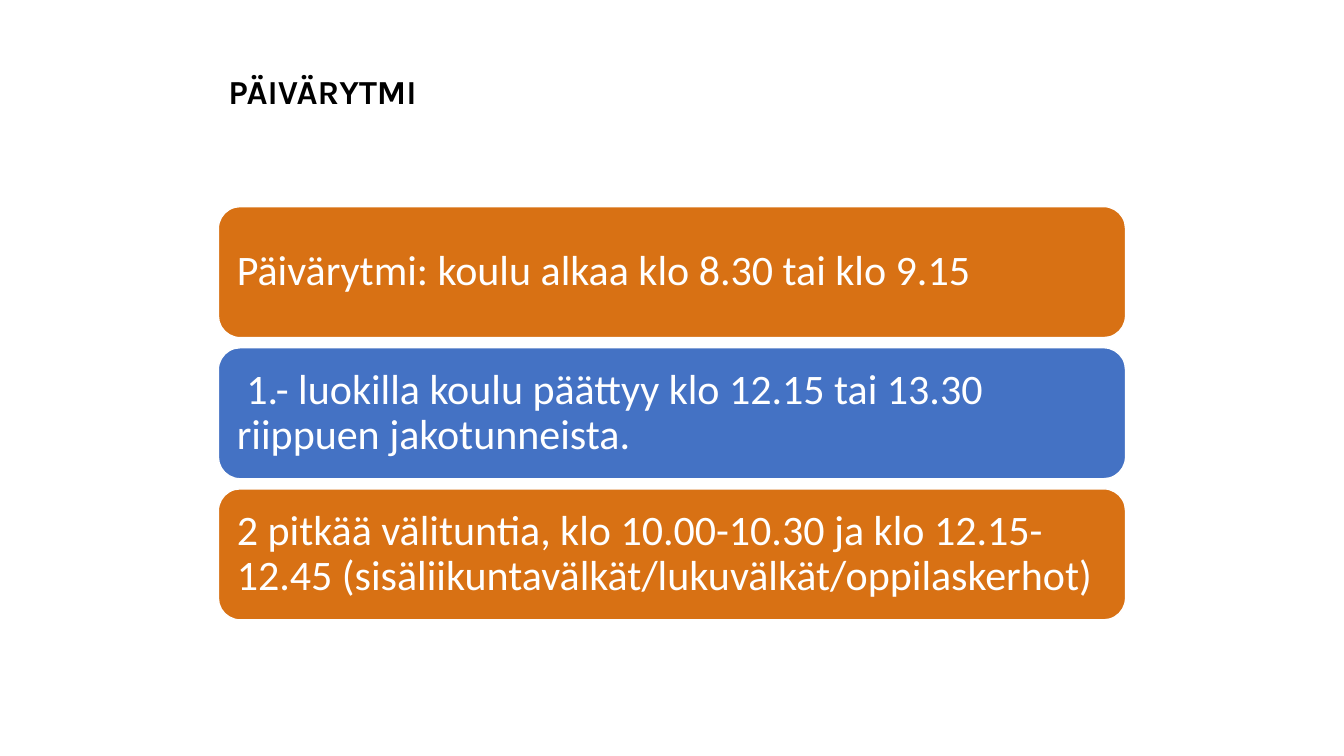
from pptx import Presentation
from pptx.dml.color import RGBColor
from pptx.enum.shapes import MSO_SHAPE as Shape
from pptx.enum.text import MSO_ANCHOR as Anchor, PP_ALIGN as Align
from pptx.util import Inches, Pt

WIDE, HIGH = Inches(13.33), Inches(7.5)
COLS, ROWS = 80, 150
ORANGE, BLUE, WHITE, BLACK = "D87114", "4472C4", "FFFFFF", "000000"
CARDS = [
    ("Päivärytmi: koulu alkaa klo 8.30 tai klo 9.15", ORANGE),
    (" 1.- luokilla koulu päättyy klo 12.15 tai 13.30 riippuen jakotunneista.", BLUE),
    ("2 pitkää välituntia, klo 10.00-10.30 ja klo 12.15-12.45 "
     "(sisäliikuntavälkät/lukuvälkät/oppilaskerhot)", ORANGE),
]


def color(code):
    """Turn a hex string into a colour."""
    return RGBColor.from_string(code)


def place(box):
    """Turn a grid box of column, row, width and height into slide lengths."""
    col, row, wide, high = box
    return (round(WIDE * col / COLS), round(HIGH * row / ROWS),
            round(WIDE * wide / COLS), round(HIGH * high / ROWS))


def write(frame, text, face, size, code, bold=False):
    """Write one left-aligned, vertically centred paragraph."""
    frame.word_wrap = True
    frame.vertical_anchor = Anchor.MIDDLE
    para = frame.paragraphs[0]
    para.alignment = Align.LEFT
    para.line_spacing = 0.9
    run = para.add_run()
    run.text = text
    run.font.name = face
    run.font.size = Pt(size)
    run.font.bold = bold
    run.font.color.rgb = color(code)


def head(slide, box, text):
    """Move the title placeholder into the box and fill it."""
    title = slide.shapes.title
    title.left, title.top, title.width, title.height = place(box)
    write(title.text_frame, text, "Karla", 24, BLACK, True)


def card(slide, box, text, fill):
    """Draw one rounded card with its text."""
    shape = slide.shapes.add_shape(Shape.ROUNDED_RECTANGLE, *place(box))
    shape.shadow.inherit = False
    shape.fill.solid()
    shape.fill.fore_color.rgb = color(fill)
    shape.line.color.rgb = color(WHITE)
    shape.line.width = Pt(1)
    frame = shape.text_frame
    frame.margin_left = frame.margin_right = Inches(0.12)
    frame.margin_top = frame.margin_bottom = Inches(0.12)
    write(frame, text, "Calibri", 30, WHITE)


def stack(slide, box, cards, gap=2):
    """Share the box out among equal cards from top to bottom."""
    col, row, wide, high = box
    tall = (high - gap * (len(cards) - 1)) / len(cards)
    for i, (text, fill) in enumerate(cards):
        card(slide, (col, row + i * (tall + gap), wide, tall), text, fill)


def main():
    """Build and save the slide."""
    deck = Presentation()
    deck.slide_width, deck.slide_height = WIDE, HIGH
    slide = deck.slides.add_slide(deck.slide_layouts[5])
    head(slide, (13, 6, 54, 25), "PÄIVÄRYTMI")
    stack(slide, (13, 41, 54, 82), CARDS)
    deck.save("out.pptx")


if __name__ == "__main__":
    main()
